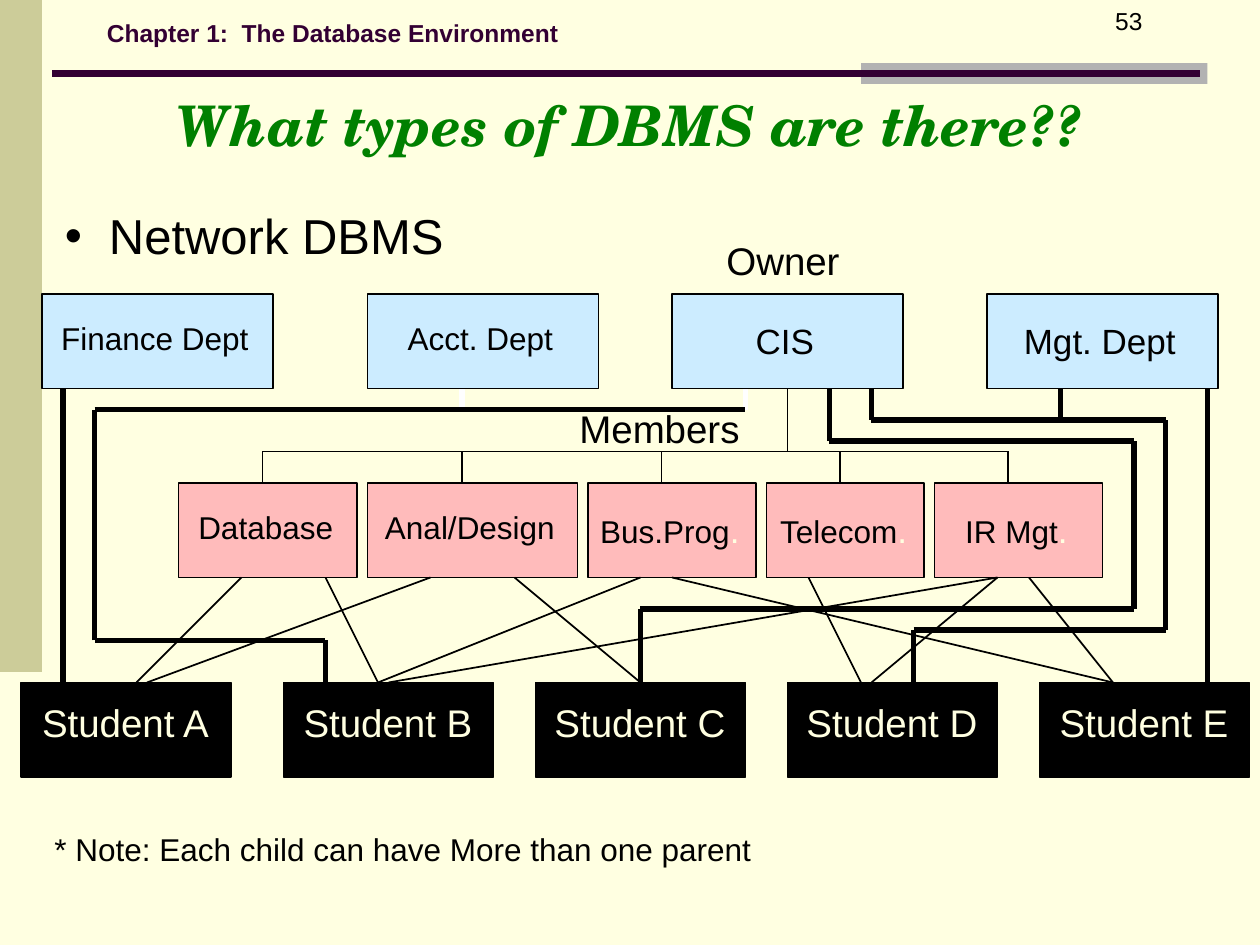
"""Build the network DBMS slide."""
from dataclasses import dataclass
from itertools import pairwise

from lxml.etree import SubElement
from pptx import Presentation
from pptx.dml.color import RGBColor
from pptx.enum.shapes import MSO_CONNECTOR, MSO_SHAPE
from pptx.enum.text import MSO_ANCHOR, MSO_AUTO_SIZE, PP_ALIGN
from pptx.oxml.ns import qn
from pptx.util import Emu, Pt

PX = 7620
BLACK, WHITE, CREAM = "000000", "FFFFFF", "FFFFE1"
BLUE, PINK, PLUM, GREEN = "CCECFF", "FFBBBB", "330033", "008000"


@dataclass(frozen=True)
class Area:
    """A rectangle in px."""
    left: int
    top: int
    width: int
    height: int

    def emu(self) -> list[Emu]:
        """Return the rectangle in EMU."""
        return [px(v) for v in (self.left, self.top, self.width, self.height)]


@dataclass(frozen=True)
class Span:
    """A run of text with its format."""
    text: str
    size: int
    color: str = BLACK
    font: str = "Arial"
    bold: bool = False
    italic: bool = False


@dataclass(frozen=True)
class CardStyle:
    """The look of one row of cards."""
    top: int
    fill: str
    label_drop: int
    label_inset: float
    label_share: float


@dataclass(frozen=True)
class Card:
    """A box with a label."""
    left: int
    width: int
    spans: tuple[Span, ...]


@dataclass(frozen=True)
class Wire:
    """A chain of straight lines through points."""
    points: tuple[tuple[int, int], ...]
    weight: float = 1
    color: str = BLACK


def px(value: int) -> Emu:
    """Turn px into EMU."""
    return Emu(value * PX)


def rgb(value: str) -> RGBColor:
    """Turn a hex string into a colour."""
    return RGBColor.from_string(value)


def apply(target: object, values: dict) -> None:
    """Set each named attribute on the target."""
    for name, value in values.items():
        setattr(target, name, value)


def draw_box(page, area: Area, fill: str, outline: str | None = None):
    """Draw a filled rectangle."""
    box = page.shapes.add_shape(MSO_SHAPE.RECTANGLE, *area.emu())
    box.shadow.inherit = False
    box.fill.solid()
    box.fill.fore_color.rgb = rgb(fill)
    if outline:
        box.line.color.rgb = rgb(outline)
        box.line.width = Pt(1)
    else:
        box.line.fill.background()
    return box


def draw_text(page, area: Area, *spans: Span, align=PP_ALIGN.LEFT,
              spacing: float = 1.0, **frame_values):
    """Draw a wrapped one-paragraph text box and return its paragraph."""
    frame = page.shapes.add_textbox(*area.emu()).text_frame
    apply(frame, {"word_wrap": True, "auto_size": MSO_AUTO_SIZE.SHAPE_TO_FIT_TEXT,
                  **frame_values})
    para = frame.paragraphs[0]
    apply(para, {"alignment": align, "line_spacing": spacing})
    for span in spans:
        run = para.add_run()
        run.text = span.text
        apply(run.font, {"name": span.font, "size": Pt(span.size),
                         "bold": span.bold, "italic": span.italic})
        run.font.color.rgb = rgb(span.color)
    return para


def add_bullet(para, indent: int) -> None:
    """Give a paragraph a round bullet with a hanging indent."""
    properties = para._p.get_or_add_pPr()
    properties.set("marL", str(px(indent)))
    properties.set("indent", str(-px(indent)))
    SubElement(properties, qn("a:buFont"), typeface="Arial")
    SubElement(properties, qn("a:buChar"), char="•")


def draw_card(page, card: Card, style: CardStyle) -> None:
    """Draw a card and the label inside it."""
    draw_box(page, Area(card.left, style.top, card.width, 90), style.fill, BLACK)
    largest = max(span.size for span in card.spans)
    label = Area(card.left + round(card.width * style.label_inset),
                 style.top + style.label_drop,
                 round(card.width * style.label_share), 2 * largest + 12)
    draw_text(page, label, *card.spans, align=PP_ALIGN.CENTER,
              margin_left=0, margin_right=0)


def draw_wire(page, wire: Wire) -> None:
    """Draw each straight part of a wire."""
    for start, end in pairwise(wire.points):
        line = page.shapes.add_connector(
            MSO_CONNECTOR.STRAIGHT, *(px(v) for v in start + end))
        line.line.color.rgb = rgb(wire.color)
        line.line.width = Pt(wire.weight)
        SubElement(line._element.spPr, qn("a:effectLst"))


DEPARTMENT = CardStyle(280, BLUE, 18, 0.045, 0.885)
MEMBER = CardStyle(460, PINK, 18, 0.045, 0.885)
STUDENT = CardStyle(650, BLACK, 10, 0.065, 0.865)
DOT = Span(".", 20, CREAM)

DEPARTMENTS = [Card(left, 220, (Span(name, size),)) for left, name, size in (
    (40, "Finance Dept", 18), (350, "Acct. Dept", 18),
    (640, "CIS", 20), (940, "Mgt. Dept", 20))]
MEMBERS = [Card(left, width, (Span(name, 18), *dots)) for left, width, name, dots in (
    (170, 170, "Database", ()), (350, 200, "Anal/Design", ()),
    (560, 160, "Bus.Prog", (DOT,)), (730, 150, "Telecom", (DOT,)),
    (890, 160, "IR Mgt", (DOT,)))]
STUDENTS = [Card(left, 200, (Span(f"Student {letter}", 22, CREAM),))
            for letter, left in zip("ABCDE", (20, 270, 510, 750, 990))]

TICKS = [Wire(((x, 390), (x, 360)), 3, WHITE) for x in (710, 440)]
TREE = [Wire(((x, 430), (x, 470))) for x in (250, 440, 630, 800, 960)]
TREE += [Wire(((750, 370), (750, 430))), Wire(((250, 430), (960, 430)))]
ENROLMENTS = [Wire(((student, 650), (member, 550))) for student, member in (
    (130, 230), (140, 410), (360, 310), (360, 610), (370, 950), (610, 490),
    (820, 770), (830, 950), (1060, 980), (1060, 640))]
OWNERSHIPS = [Wire(points, 3) for points in (
    ((60, 650), (60, 370)),
    ((310, 650), (310, 610), (90, 610), (90, 390), (710, 390)),
    ((610, 650), (610, 580), (1080, 580), (1080, 420), (790, 420), (790, 370)),
    ((870, 650), (870, 600), (1110, 600), (1110, 400), (830, 400), (830, 370)),
    ((1010, 400), (1010, 370)),
    ((1150, 650), (1150, 370)))]


def main() -> None:
    """Build and save the deck."""
    deck = Presentation()
    apply(deck, {"slide_width": px(1200), "slide_height": px(900)})
    page = deck.slides.add_slide(deck.slide_layouts[6])
    page.background.fill.solid()
    page.background.fill.fore_color.rgb = rgb(CREAM)

    draw_box(page, Area(0, 0, 40, 640), "CCCC99")
    draw_box(page, Area(820, 60, 330, 20), "B2B2B2")
    draw_wire(page, Wire(((50, 70), (1143, 70)), 3.5, PLUM))
    draw_text(page, Area(90, 10, 1020, 43),
              Span("Chapter 1:  The Database Environment", 14, PLUM, bold=True),
              vertical_anchor=MSO_ANCHOR.MIDDLE)
    draw_text(page, Area(850, 0, 250, 60), Span("53", 14),
              align=PP_ALIGN.RIGHT, auto_size=MSO_AUTO_SIZE.NONE)
    draw_text(page, Area(0, 80, 1200, 77),
              Span("What types of DBMS are there??", 32, GREEN,
                   "TeX Gyre Schola", True, True), align=PP_ALIGN.CENTER)
    add_bullet(draw_text(page, Area(50, 190, 500, 68), Span("Network DBMS", 28)), 42)

    for wire in TICKS + TREE:
        draw_wire(page, wire)
    for style, cards in ((MEMBER, MEMBERS), (DEPARTMENT, DEPARTMENTS),
                         (STUDENT, STUDENTS)):
        for card in cards:
            draw_card(page, card, style)
    for wire in ENROLMENTS + OWNERSHIPS:
        draw_wire(page, wire)

    draw_text(page, Area(40, 794, 1160, 37),
              Span("* Note: Each child can have More than one parent", 18), spacing=0.7)
    draw_text(page, Area(680, 220, 200, 56), Span("Owner", 22))
    draw_text(page, Area(540, 380, 200, 56), Span("Members", 22))
    deck.save("out.pptx")


if __name__ == "__main__":
    main()
